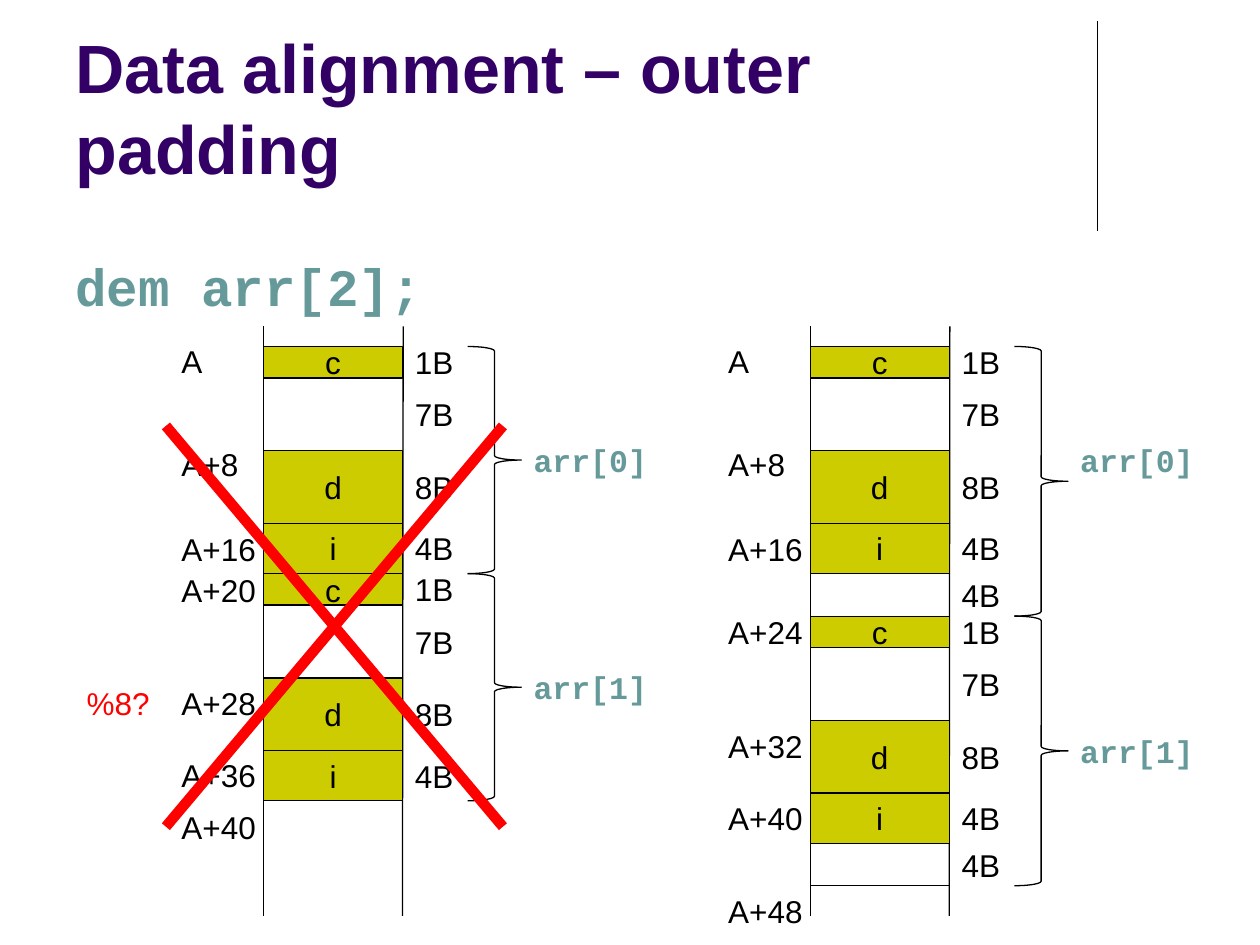
from lxml import etree
from pptx import Presentation
from pptx.dml.color import RGBColor
from pptx.enum import shapes, text
from pptx.oxml.ns import qn
from pptx.util import Pt

BLACK = RGBColor(0x00, 0x00, 0x00)
PURPLE = RGBColor(0x33, 0x00, 0x66)
TEAL = RGBColor(0x66, 0x99, 0x99)
OLIVE = RGBColor(0xCC, 0xCC, 0x00)
RED = RGBColor(0xFF, 0x00, 0x00)

SANS, MONO = "Arial", "Courier New"
SIZE = 18
LABEL_H = 28.8
COLUMN_W = 79.4

# Name, size label, top and height of each part of a struct; padding has no name
FIELDS = [
    ("c", "1B", 0, 18),
    ("", "7B", 18, 41.6),
    ("d", "8B", 59.6, 41.4),
    ("i", "4B", 101, 28.8),
]
STRUCT_H = 129.8
OUTER_PADDING = 24.3

# Character widths of the label font, in points
ADVANCE = {"A": 12, "B": 12, "+": 10.5, "%": 16}


def add_run(p, words, size, font, color, bold=False):
    r = p.add_run()
    r.text = words
    r.font.size = Pt(size)
    r.font.name = font
    r.font.bold = bold
    r.font.color.rgb = color


def add_text(slide, x, y, w, h, words, size=SIZE, font=SANS, color=BLACK, bold=False):
    sp = slide.shapes.add_textbox(Pt(x), Pt(y), Pt(w), Pt(h))
    tf = sp.text_frame
    tf.word_wrap = False
    add_run(tf.paragraphs[0], words, size, font, color, bold)


def add_label(slide, x, middle, words, color=BLACK):
    """Place a label just wide enough for its words, centred on a height."""
    w = 14.4 + sum(ADVANCE.get(char, 10) for char in words)
    add_text(slide, x, middle - LABEL_H / 2, w, LABEL_H, words, color=color)


def add_line(slide, x1, y1, x2, y2, color=BLACK, width=0.75):
    line = slide.shapes.add_connector(
        shapes.MSO_CONNECTOR.STRAIGHT, Pt(x1), Pt(y1), Pt(x2), Pt(y2))
    line.line.color.rgb = color
    line.line.width = Pt(width)
    etree.SubElement(line._element.spPr, qn("a:effectLst"))


def add_outlined(slide, kind, x, y, w, h):
    sp = slide.shapes.add_shape(kind, Pt(x), Pt(y), Pt(w), Pt(h))
    sp.shadow.inherit = False
    sp.line.color.rgb = BLACK
    sp.line.width = Pt(0.75)
    return sp


def add_field(slide, x, y, h, name):
    sp = add_outlined(slide, shapes.MSO_SHAPE.RECTANGLE, x, y, COLUMN_W, h)
    sp.fill.solid()
    sp.fill.fore_color.rgb = OLIVE
    tf = sp.text_frame
    tf.word_wrap = False
    tf.margin_top = tf.margin_bottom = 0
    tf.vertical_anchor = text.MSO_ANCHOR.MIDDLE
    p = tf.paragraphs[0]
    p.alignment = text.PP_ALIGN.CENTER
    add_run(p, name, SIZE, SANS, BLACK)


def add_struct(slide, x, y, padding, tag, tag_middle):
    """Draw one array element: fields, size labels, brace and name."""
    for name, size, top, h in FIELDS:
        if name:
            add_field(slide, x, y + top, h, name)
        add_label(slide, x + COLUMN_W, y + top + h / 2, size)
    if padding:
        add_label(slide, x + COLUMN_W, y + STRUCT_H + padding / 2, "4B")
    brace = add_outlined(slide, shapes.MSO_SHAPE.RIGHT_BRACE,
                         x + 116.6, y, 30.7, STRUCT_H + padding)
    brace.fill.background()
    add_text(slide, x + 147.2, y + tag_middle - LABEL_H / 2, 80, LABEL_H,
             tag, font=MONO, color=TEAL, bold=True)


def add_memory(slide, x, y, padding, tag_middles, addresses):
    """Draw a memory column holding a two-element array."""
    add_line(slide, x, y - 11.5, x, y + 325.4)
    add_line(slide, x + COLUMN_W + 0.4, y - 11.5, x + COLUMN_W, y + 325.4)
    for n, middle in enumerate(tag_middles):
        add_struct(slide, x, y + n * (STRUCT_H + padding), padding,
                   f"arr[{n}]", middle)
    if padding:
        end = y + 2 * (STRUCT_H + padding)
        add_line(slide, x, end, x + COLUMN_W, end)
    for words, middle in addresses:
        add_label(slide, x - 54, y + middle, words)


def add_cross(slide, x, y, w, h):
    add_line(slide, x, y, x + w, y + h, RED, 6)
    add_line(slide, x + w, y, x, y + h, RED, 6)


def add_heading(slide, x, y, w, h):
    title = slide.shapes.title
    title.left, title.top, title.width, title.height = Pt(x), Pt(y), Pt(w), Pt(h)
    tf = title.text_frame
    tf.word_wrap = True
    tf.auto_size = text.MSO_AUTO_SIZE.NONE
    tf.vertical_anchor = text.MSO_ANCHOR.BOTTOM
    p = tf.paragraphs[0]
    p.alignment = text.PP_ALIGN.LEFT
    add_run(p, "Data alignment – outer padding", 39, SANS, PURPLE, True)
    add_line(slide, x + 591, 12, x + 591, 132)


def main():
    prs = Presentation()
    prs.slide_width, prs.slide_height = Pt(720), Pt(540)
    slide = prs.slides.add_slide(prs.slide_layouts[5])

    add_heading(slide, 36, 9.4, 594, 102)
    add_text(slide, 36, 141.4, 648, 49.7, "dem arr[2];", 30, MONO, TEAL, True)

    add_memory(slide, 150.6, 198, 0, (64.8, 64.8), [
        ("A", 8.6), ("A+8", 67), ("A+16", 116), ("A+20", 139),
        ("A+28", 203.8), ("A+36", 244.8), ("A+40", 274.4)])
    add_label(slide, 42.5, 401.8, "%8?", RED)
    add_memory(slide, 463, 198, OUTER_PADDING, (64.8, 77), [
        ("A", 8.6), ("A+8", 67), ("A+16", 116), ("A+24", 163.4),
        ("A+32", 228.2), ("A+40", 269.3), ("A+48", 322.6)])
    add_cross(slide, 94.8, 243.4, 192.6, 229)

    prs.save("out.pptx")


if __name__ == "__main__":
    main()
